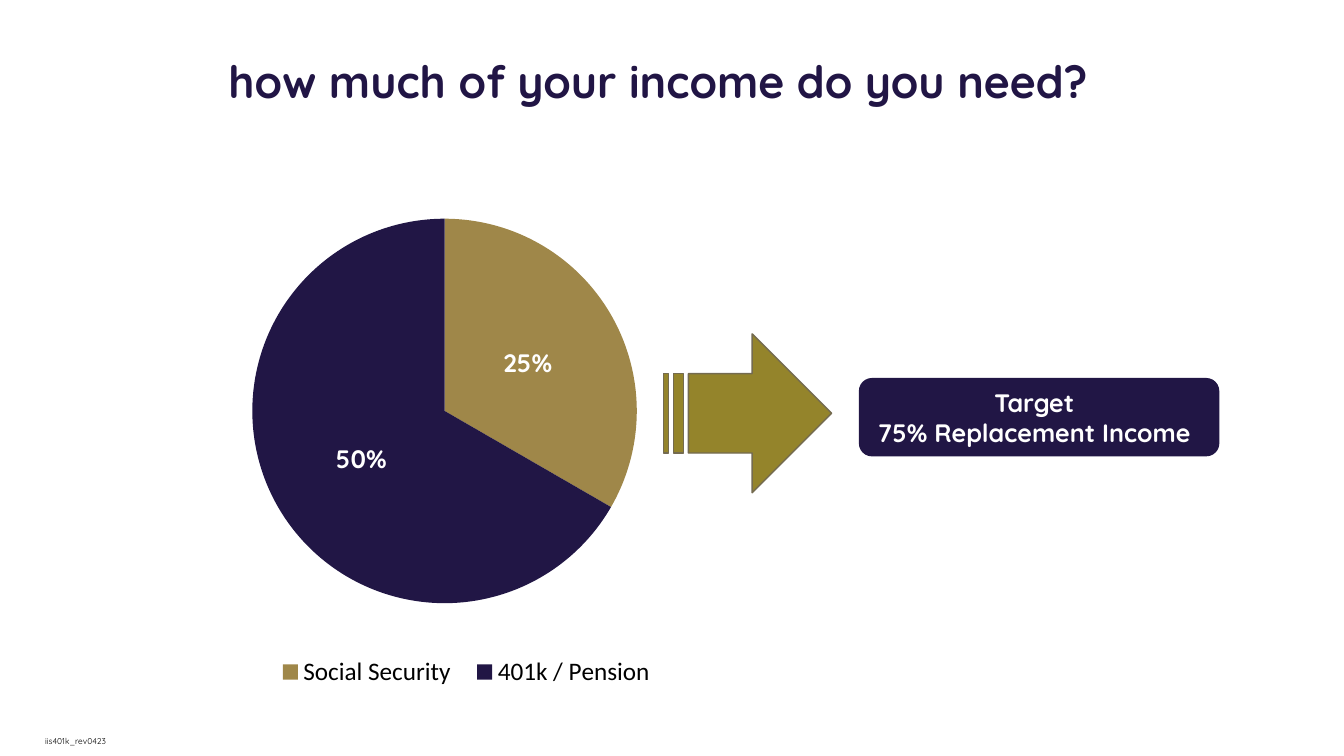
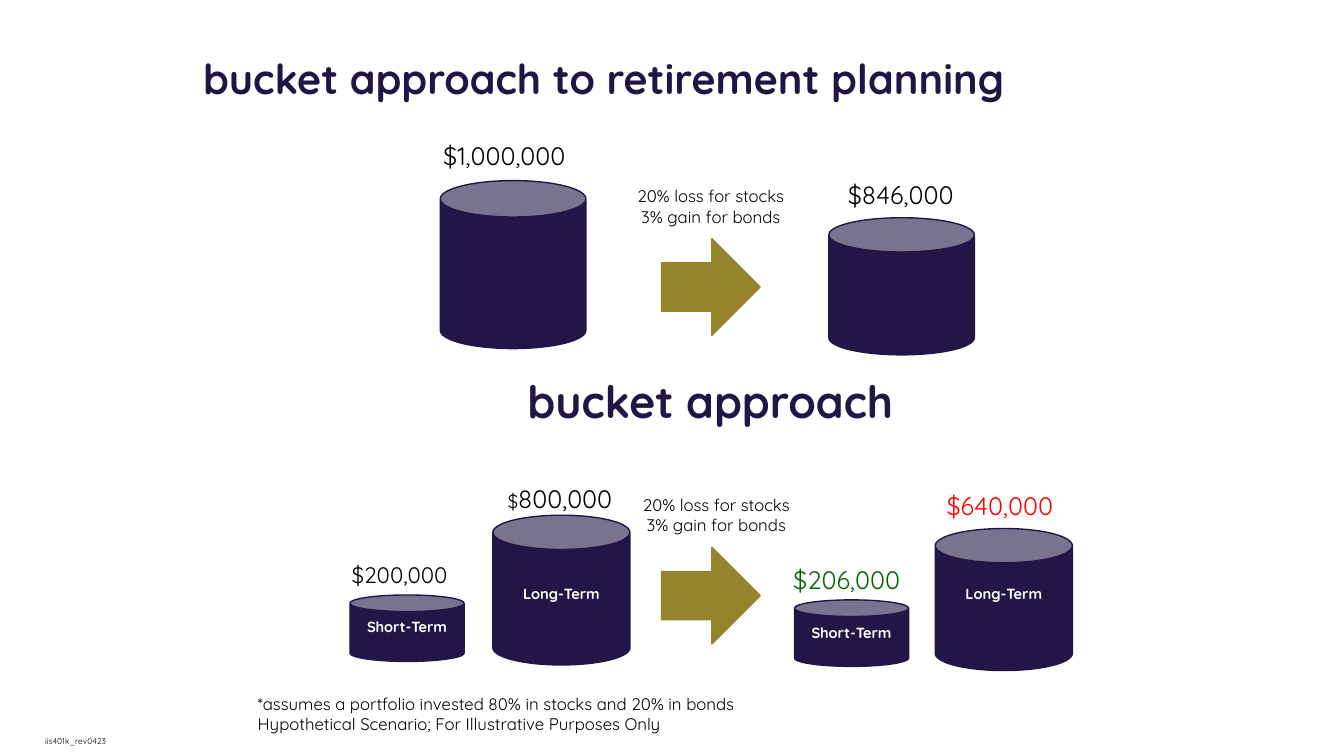
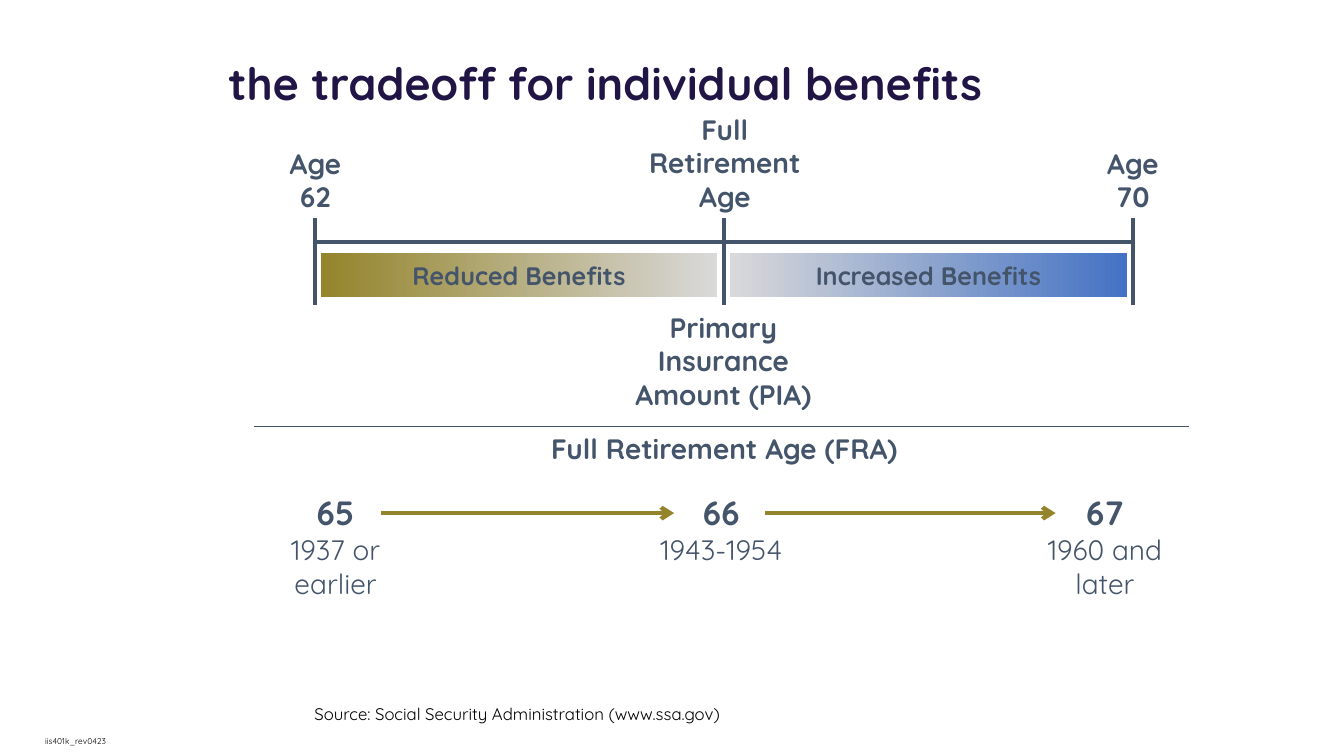
from lxml import etree
from pptx import Presentation
from pptx.chart.data import CategoryChartData
from pptx.dml.color import RGBColor
from pptx.enum.chart import XL_CHART_TYPE, XL_LABEL_POSITION, XL_LEGEND_POSITION
from pptx.enum.shapes import MSO_CONNECTOR, MSO_SHAPE as Kind
from pptx.enum.text import MSO_ANCHOR as Anchor, PP_ALIGN as Align
from pptx.oxml import parse_xml
from pptx.oxml.ns import nsdecls, qn
from pptx.util import Pt

TITLE = RGBColor(0x21, 0x15, 0x45)
NAVY = RGBColor(0x21, 0x16, 0x45)
GOLD = RGBColor(0x9F, 0x87, 0x49)
OLIVE = RGBColor(0x94, 0x84, 0x2B)
EDGE = RGBColor(0x74, 0x6B, 0x50)
SLATE = RGBColor(0x44, 0x54, 0x6A)
SILVER = RGBColor(0xD9, 0xD9, 0xD9)
BLUE = RGBColor(0x44, 0x72, 0xC4)
GREEN = RGBColor(0x00, 0x66, 0x00)
RED = RGBColor(0xFF, 0x00, 0x00)
BLACK = RGBColor(0, 0, 0)
WHITE = RGBColor(0xFF, 0xFF, 0xFF)
FONT = "Quicksand"


def put(slide, box, text="", size=18, color=BLACK, bold=False,
        align=Align.CENTER, anchor=Anchor.TOP, kind=None, fill=None, edge=None):
    """Add a text box, or a filled shape when a kind is given."""
    area = [Pt(v) for v in box]
    if kind is None:
        shape = slide.shapes.add_textbox(*area)
    else:
        shape = slide.shapes.add_shape(kind, *area)
        shape.shadow.inherit = False
        if fill is not None:
            shape.fill.solid()
            shape.fill.fore_color.rgb = fill
        if edge is None:
            shape.line.fill.background()
        else:
            shape.line.color.rgb = edge
            shape.line.width = Pt(1)
    frame = shape.text_frame
    frame.word_wrap = True
    frame.vertical_anchor = anchor
    if text:
        frame.text = text
        for para in frame.paragraphs:
            para.alignment = align
            font = para.font
            font.name, font.size, font.bold = FONT, Pt(size), bold
            font.color.rgb = color
    return shape


def rule(slide, x1, y1, x2, y2, color=SLATE, width=3, arrow=False):
    line = slide.shapes.add_connector(
        MSO_CONNECTOR.STRAIGHT, Pt(x1), Pt(y1), Pt(x2), Pt(y2))
    line.line.color.rgb = color
    line.line.width = Pt(width)
    props = line.element.spPr
    if arrow:
        etree.SubElement(props.find(qn("a:ln")), qn("a:tailEnd"), type="arrow")
    etree.SubElement(props, qn("a:effectLst"))


deck = Presentation()
deck.slide_width, deck.slide_height = Pt(960), Pt(540)

# Titles and footers
slides = []
for text, box, size, anchor in [
    ("how much of your income do you need?", (156, 38, 773, 44), 32, Anchor.MIDDLE),
    ("bucket approach to retirement planning", (138, 22, 629, 55.5), 29.6, Anchor.BOTTOM),
    ("the tradeoff for individual benefits", (156, 38, 738, 44), 32, Anchor.BOTTOM),
]:
    slide = deck.slides.add_slide(deck.slide_layouts[6])
    title = put(slide, box, text, size, TITLE, True, Align.LEFT, anchor)
    title.text_frame.paragraphs[0].line_spacing = 0.9
    put(slide, (0, 522.5, 108, 13), "iis401k_rev0423", 6, anchor=Anchor.MIDDLE)
    slides.append(slide)
income, bucket, trade = slides

# Income: pie, arrow and target
target = put(income, (613.5, 270, 257.5, 56), "Target\n75% Replacement Income", 18,
             WHITE, True, anchor=Anchor.MIDDLE, kind=Kind.ROUNDED_RECTANGLE, fill=NAVY)
target.text_frame.margin_right = Pt(14)

data = CategoryChartData(number_format='0"%"')
data.categories = ["Social Security", "401k / Pension"]
data.add_series("Series 1", (25, 50))
chart = income.shapes.add_chart(
    XL_CHART_TYPE.PIE, Pt(162.5), Pt(82), Pt(443), Pt(419), data).chart
chart.has_title = False
chart.font.name, chart.font.size = "Calibri", Pt(18)
chart.font.color.rgb = BLACK
chart.has_legend = True
chart.legend.position = XL_LEGEND_POSITION.BOTTOM
chart.legend.include_in_layout = False

plot = chart.plots[0]
plot.vary_by_categories = True
for i, color in enumerate((GOLD, NAVY)):
    fill = plot.series[0].points[i].format.fill
    fill.solid()
    fill.fore_color.rgb = color
plot.has_data_labels = True
labels = plot.data_labels
labels.show_value = True
labels.show_percentage = False
labels.number_format = '0"%"'
labels.number_format_is_linked = False
labels.position = XL_LABEL_POSITION.CENTER
labels.font.name, labels.font.size, labels.font.bold = FONT, Pt(18), True
labels.font.color.rgb = WHITE

for tag, index, target_tag, area in [
    ("c:plotArea", 0, '<c:layoutTarget val="inner"/>', (0.04, 0.1, 0.62, 0.81)),
    ("c:legend", 1, "", (0.06, 0.91, 0.65, 0.08)),
]:
    node = chart.element.find(".//" + qn(tag))
    for old in node.findall(qn("c:layout")):
        node.remove(old)
    modes = "".join(f'<c:{k}Mode val="edge"/>' for k in "xy")
    sizes = "".join(f'<c:{k} val="{v}"/>' for k, v in zip("xywh", area))
    node.insert(index, parse_xml(
        f'<c:layout {nsdecls("c")}><c:manualLayout>{target_tag}{modes}{sizes}'
        "</c:manualLayout></c:layout>"))

put(income, (474, 238.5, 120, 113.5), kind=Kind.STRIPED_RIGHT_ARROW, fill=OLIVE, edge=EDGE)

# Buckets: can, name, top of name, amount, its place, size and colour
for can, name, top, amount, spot, size, color in [
    ((314.5, 129, 104, 120), "", 0, "$1,000,000", (309.5, 96.5), 18, BLACK),
    ((592, 155.5, 104, 98), "", 0, "$846,000", (598.5, 124.5), 18, BLACK),
    ((250, 425, 81.5, 47.5), "Short-Term", 438, "$200,000", (244, 397.5), 16, BLACK),
    ((352, 368, 98, 107), "Long-Term", 414.5, "$800,000", (355.5, 341.5), 18, BLACK),
    ((567.5, 428.5, 81.5, 47.5), "Short-Term", 442, "$206,000", (559.5, 399.5), 18, GREEN),
    ((668, 377.5, 98, 101.5), "Long-Term", 414.5, "$640,000", (669, 347), 18, RED),
]:
    left, _, width, _ = can
    put(bucket, can, kind=Kind.CAN, fill=NAVY, edge=NAVY)
    if name:
        put(bucket, (left - 4, top, width + 8, 20), name, 10.5, WHITE, True)
    sum_box = put(bucket, (*spot, 118, 29), amount, size, color, align=Align.LEFT)
    if amount == "$800,000":
        para = sum_box.text_frame.paragraphs[0]
        sign = para.runs[0]
        sign.text, sign.font.size = "$", Pt(13.5)
        para.add_run().text = "800,000"

for left, top in [(444, 129.5), (448, 350)]:
    put(bucket, (left, top, 127.5, 36), "20% loss for stocks\n3% gain for bonds", 12)
    put(bucket, (472.5, top + 41, 70.5, 69), kind=Kind.RIGHT_ARROW, fill=OLIVE, edge=OLIVE)

head = put(bucket, (250, 268, 515, 31), "bucket approach", 32, NAVY, True)
head.text_frame.paragraphs[0].line_spacing = 0.9
put(bucket, (177, 492, 628.5, 36),
    "*assumes a portfolio invested 80% in stocks and 20% in bonds\n"
    "Hypothetical Scenario; For Illustrative Purposes Only", 12, align=Align.LEFT)

# Tradeoff: time line
rule(trade, 225, 173, 809.5, 173)
for x in (225, 517, 809.5):
    rule(trade, x, 156, x, 218)
for text, box in [
    ("Age 62", (188.5, 101, 73.5, 55)),
    ("Age 70", (772.5, 101, 73.5, 55)),
    ("Full\vRetirement\vAge", (427, 76.5, 181.5, 80)),
    ("Primary Insurance Amount (PIA)", (426, 218, 181.5, 80)),
    ("Full Retirement Age (FRA)", (340, 304.5, 355, 32)),
]:
    put(trade, box, text, 20, SLATE, True)

for left, text, ends in [
    (229, "Reduced Benefits", (OLIVE, SILVER)),
    (521.5, "Increased Benefits", (SILVER, BLUE)),
]:
    band = put(trade, (left, 181, 283.5, 31), text, 18, SLATE, True,
               anchor=Anchor.MIDDLE, kind=Kind.RECTANGLE)
    band.text_frame.margin_top = band.text_frame.margin_bottom = 0
    band.fill.gradient()
    band.fill.gradient_angle = 0
    for stop, color in zip(band.fill.gradient_stops, ends):
        stop.color.rgb = color

# Tradeoff: full retirement age by birth year
rule(trade, 181.5, 304.5, 849, 304.5, width=0.75)
for left, width, text in [
    (191.5, 96.5, "65\n1937 or earlier"),
    (450, 130.5, "66\n1943-1954"),
    (741, 96.5, "67\n1960 and later"),
]:
    ages = put(trade, (left, 348, width, 85), text, 20, SLATE)
    font = ages.text_frame.paragraphs[0].font
    font.size, font.bold = Pt(24), True
for start, end in [(272, 481.5), (546.5, 754)]:
    rule(trade, start, 366.5, end, 366.5, OLIVE, arrow=True)

put(trade, (217.5, 499.5, 515, 22),
    "Source: Social Security Administration (www.ssa.gov)", 12, align=Align.LEFT)

deck.save("out.pptx")
